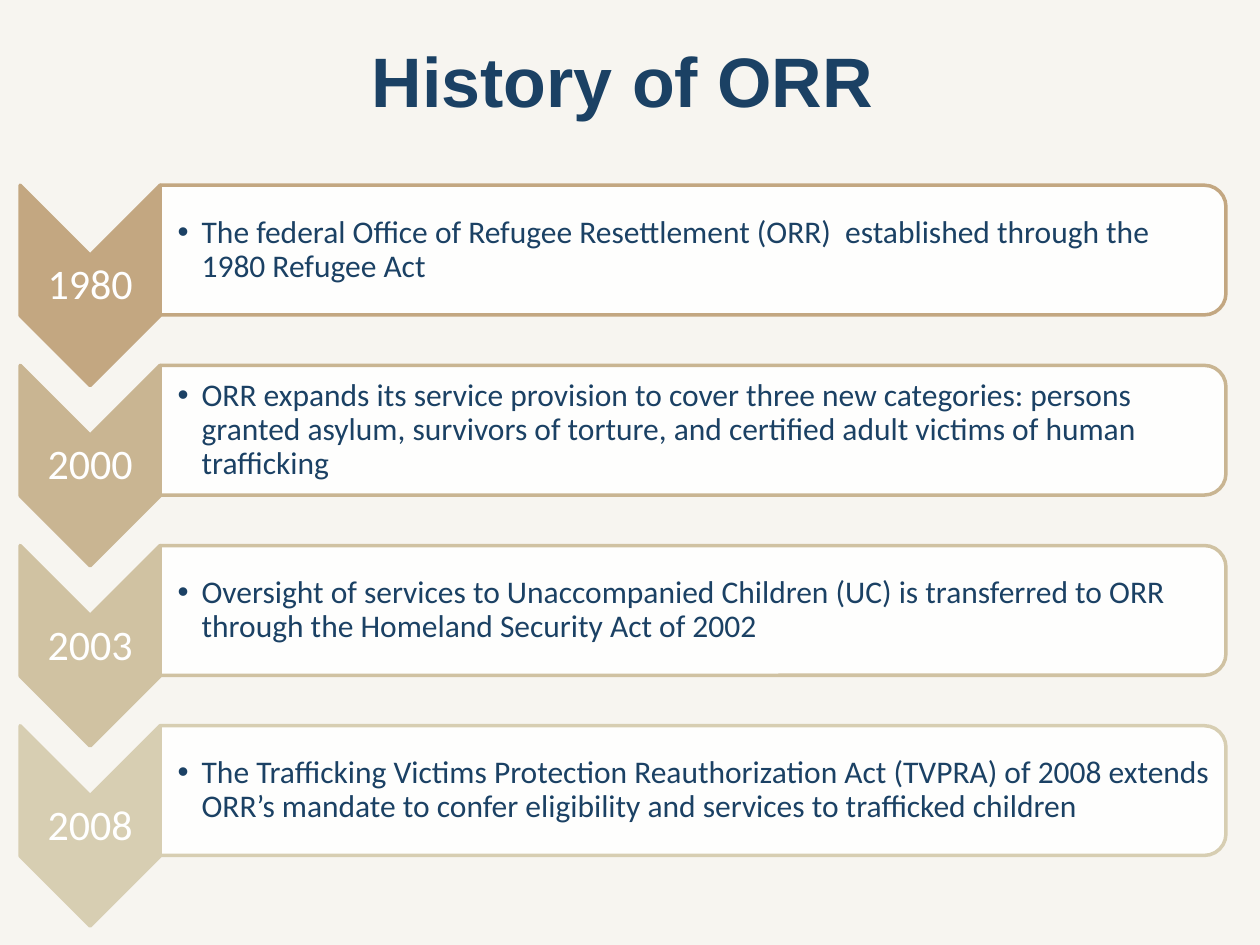
from lxml.etree import SubElement
from pptx import Presentation
from pptx.dml.color import RGBColor
from pptx.enum.shapes import MSO_SHAPE as SHAPE
from pptx.enum.text import MSO_ANCHOR as ANCHOR, PP_ALIGN as ALIGN
from pptx.oxml.ns import qn
from pptx.util import Inches, Pt

NAVY, WHITE, CREAM = "1B4164", "FFFFFF", "F7F5F0"
FIRST_ROW, ROW_STEP = 1.47, 1.43
CHEVRON_W, CHEVRON_H = 1.11, 1.59
PANEL_W, PANEL_H = 8.46, 1.03
LEFT = 0.16
PANEL_LEFT = LEFT + CHEVRON_W

MILESTONES = [
    ("1980", "C3A781", "The federal Office of Refugee Resettlement (ORR)  established "
     "through the 1980 Refugee Act"),
    ("2000", "C9B592", "ORR expands its service provision to cover three new categories: "
     "persons granted asylum, survivors of torture, and certified adult victims of human "
     "trafficking"),
    ("2003", "D0C2A2", "Oversight of services to Unaccompanied Children (UC) is transferred "
     "to ORR through the Homeland Security Act of 2002"),
    ("2008", "D7CEB2", "The Trafficking Victims Protection Reauthorization Act (TVPRA) of "
     "2008 extends ORR’s mandate to confer eligibility and services to trafficked children"),
]


def rgb(color):
    return RGBColor.from_string(color)


def format_font(font, name, size, color, bold=False):
    font.name, font.size, font.bold = name, Pt(size), bold
    font.color.rgb = rgb(color)


def set_margins(tf, left, rest):
    tf.margin_left = Inches(left)
    tf.margin_top = tf.margin_right = tf.margin_bottom = Inches(rest)


def add_turned_shape(s, kind, x, y, w, h, fill, line):
    left, top = x + (w - h) / 2, y + (h - w) / 2
    sp = s.shapes.add_shape(kind, Inches(left), Inches(top), Inches(h), Inches(w))
    sp.rotation = 90
    sp.shadow.inherit = False
    sp.fill.solid()
    sp.fill.fore_color.rgb = rgb(fill)
    sp.line.color.rgb = rgb(line)
    sp.line.width = Pt(2)
    return sp


def add_text(s, x, y, w, h, text, size, color, margins):
    tf = s.shapes.add_textbox(Inches(x), Inches(y), Inches(w), Inches(h)).text_frame
    tf.word_wrap = True
    tf.vertical_anchor = ANCHOR.MIDDLE
    set_margins(tf, *margins)
    p = tf.paragraphs[0]
    p.text = text
    p.line_spacing = 0.9
    format_font(p.runs[0].font, "Calibri", size, color)
    return p


def add_bullet(p, indent):
    p.level = 1
    pPr = p._p.get_or_add_pPr()
    pPr.set("marL", str(Inches(indent)))
    pPr.set("indent", str(-Inches(indent)))
    SubElement(pPr, qn("a:buFont")).set("typeface", "Arial")
    SubElement(pPr, qn("a:buChar")).set("char", "•")


def add_year(s, y, year, color):
    add_turned_shape(s, SHAPE.CHEVRON, LEFT, y, CHEVRON_W, CHEVRON_H, color, color)
    p = add_text(s, LEFT, y + 0.56, CHEVRON_W, 0.48, year, 24, WHITE, (0.02, 0.02))
    p.alignment = ALIGN.CENTER


def add_panel(s, y, text, color):
    sp = add_turned_shape(s, SHAPE.ROUND_2_SAME_RECTANGLE, PANEL_LEFT, y,
                          PANEL_W, PANEL_H, WHITE, color)
    fill = sp.fill._xPr.find(qn("a:solidFill"))
    SubElement(fill[0], qn("a:alpha")).set("val", "90000")
    p = add_text(s, PANEL_LEFT, y + 0.05, PANEL_W - 0.05, PANEL_H - 0.1,
                 text, 18, NAVY, (0.14, 0.01))
    add_bullet(p, 0.19)


def add_title(s, text):
    title = s.shapes.title
    title.left, title.top = Inches(0.44), Inches(0.2)
    title.width, title.height = Inches(9), Inches(0.95)
    tf = title.text_frame
    tf.text = text
    tf.vertical_anchor = ANCHOR.TOP
    tf.margin_top = Inches(0.1)
    p = tf.paragraphs[0]
    p.alignment = ALIGN.CENTER
    format_font(p.runs[0].font, "Arial", 40, NAVY, bold=True)


def main():
    prs = Presentation()
    prs.slide_width, prs.slide_height = Inches(10), Inches(7.5)
    s = prs.slides.add_slide(prs.slide_layouts[5])
    s.background.fill.solid()
    s.background.fill.fore_color.rgb = rgb(CREAM)
    add_title(s, "History of ORR")
    for i, (year, color, text) in enumerate(MILESTONES):
        y = FIRST_ROW + i * ROW_STEP
        add_year(s, y, year, color)
        add_panel(s, y, text, color)
    prs.save("out.pptx")


if __name__ == "__main__":
    main()
